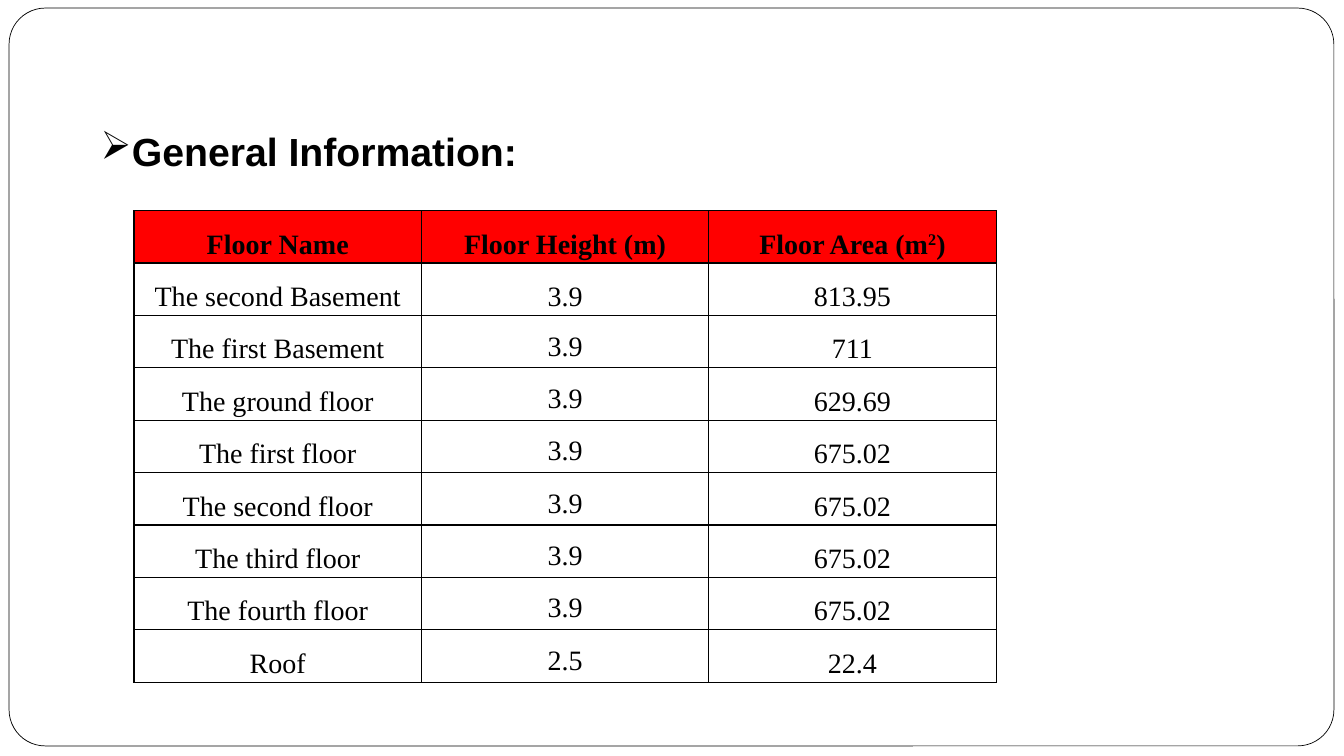
"""Build a slide with a framed table of floor heights and areas."""
from lxml.etree import SubElement
from pptx import Presentation
from pptx.dml.color import RGBColor
from pptx.enum.shapes import MSO_SHAPE
from pptx.enum.text import MSO_ANCHOR, PP_ALIGN
from pptx.oxml.ns import qn
from pptx.util import Inches, Pt

BLACK = RGBColor(0, 0, 0)
WHITE = RGBColor(255, 255, 255)
RED = RGBColor(255, 0, 0)

FLOORS = [
    ("Floor Name", "Floor Height (m)", "Floor Area (m²)"),
    ("The second Basement", "3.9", "813.95"),
    ("The first Basement", "3.9", "711"),
    ("The ground floor", "3.9", "629.69"),
    ("The first floor", "3.9", "675.02"),
    ("The second floor", "3.9", "675.02"),
    ("The third floor", "3.9", "675.02"),
    ("The fourth floor", "3.9", "675.02"),
    ("Roof", "2.5", "22.4"),
]


def add_frame(slide, left, top, width, height):
    """Draw the thin rounded frame around the slide."""
    frame = slide.shapes.add_shape(
        MSO_SHAPE.ROUNDED_RECTANGLE, Inches(left), Inches(top), Inches(width), Inches(height))
    frame.adjustments[0] = 0.049
    frame.shadow.inherit = False
    frame.fill.solid()
    frame.fill.fore_color.rgb = WHITE
    frame.line.color.rgb = BLACK
    frame.line.width = Pt(0.5)


def add_heading(slide, text, left, top, width, height):
    """Place the heading with its arrow bullet."""
    box = slide.shapes.add_textbox(Inches(left), Inches(top), Inches(width), Inches(height))
    heading = box.text_frame.paragraphs[0]
    heading.text = text
    heading.level = 1
    heading.font.name = "Arial"
    heading.font.size = Pt(28)
    heading.font.bold = True
    heading.font.color.rgb = BLACK
    properties = heading._p.get_or_add_pPr()
    properties.set("marL", str(Inches(0.81)))
    properties.set("indent", str(Inches(-0.31)))
    bullet = SubElement(properties, qn("a:buChar"), char="➢")
    properties.remove(bullet)
    properties.insert(0, bullet)


def add_borders(cell):
    """Give a cell a black line on every side."""
    properties = cell._tc.get_or_add_tcPr()
    for position, side in enumerate(("a:lnL", "a:lnR", "a:lnT", "a:lnB")):
        line = SubElement(properties, qn(side), w=str(Pt(1)))
        fill = SubElement(line, qn("a:solidFill"))
        SubElement(fill, qn("a:srgbClr"), val=str(BLACK))
        properties.insert(position, line)


def fill_cell(cell, text, is_header, anchor):
    """Write one table cell, raising a trailing square sign."""
    cell.margin_left = cell.margin_right = Inches(0.07)
    cell.margin_top = cell.margin_bottom = 0
    cell.vertical_anchor = anchor
    if is_header:
        cell.fill.solid()
        cell.fill.fore_color.rgb = RED
    else:
        cell.fill.background()
    add_borders(cell)
    entry = cell.text_frame.paragraphs[0]
    entry.alignment = PP_ALIGN.CENTER
    entry.line_spacing = 1.5
    entry.space_after = Pt(6)
    entry.font.name = "Times New Roman"
    entry.font.size = Pt(20)
    entry.font.bold = is_header
    entry.font.color.rgb = BLACK
    base, square, rest = text.partition("²")
    entry.add_run().text = base
    if square:
        exponent = entry.add_run()
        exponent.text = "2"
        exponent.font._element.set("baseline", "30000")
        entry.add_run().text = rest


def add_floor_table(slide, floors, left, top, width, height):
    """Place the table of floors with equal rows and columns."""
    table = slide.shapes.add_table(
        len(floors), len(floors[0]), Inches(left), Inches(top), Inches(width), Inches(height)).table
    table.horz_banding = False
    for row, floor in enumerate(floors):
        for column, text in enumerate(floor):
            at_top = column == 1 and row > 1
            anchor = MSO_ANCHOR.TOP if at_top else MSO_ANCHOR.MIDDLE
            fill_cell(table.cell(row, column), text, row == 0, anchor)


def main():
    """Build and save the presentation."""
    presentation = Presentation()
    presentation.slide_width = Inches(13.33)
    presentation.slide_height = Inches(7.5)
    slide = presentation.slides.add_slide(presentation.slide_layouts[6])
    add_frame(slide, 0.09, 0.08, 13.14, 7.32)
    add_floor_table(slide, FLOORS, 1.33, 2.09, 8.55, 4.68)
    add_heading(slide, "General Information:", 0.4, 1.21, 4.89, 0.88)
    presentation.save("out.pptx")


if __name__ == "__main__":
    main()
